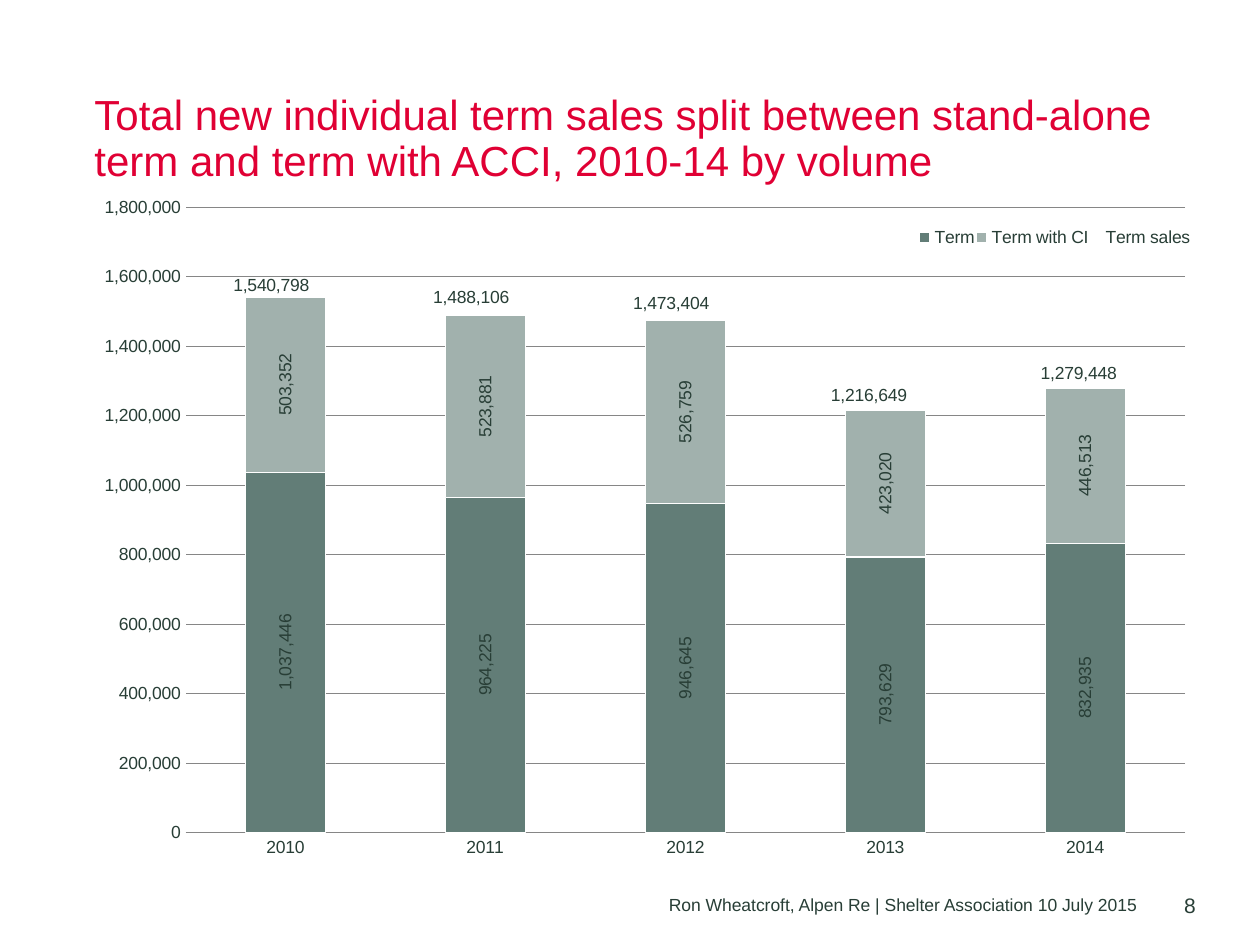
from copy import deepcopy

from lxml.etree import Element, SubElement
from pptx import Presentation
from pptx.chart.data import CategoryChartData
from pptx.dml.color import RGBColor
from pptx.enum.chart import XL_CHART_TYPE, XL_LABEL_POSITION, XL_LEGEND_POSITION, XL_TICK_MARK
from pptx.enum.text import MSO_ANCHOR, PP_ALIGN
from pptx.oxml.ns import qn
from pptx.util import Inches, Pt

TITLE = ("Total new individual term sales split between stand-alone "
         "term and term with ACCI, 2010-14 by volume")
FOOTER = "Ron Wheatcroft, Alpen Re | Shelter Association 10 July 2015"
PAGE = "8"
YEARS = ["2010", "2011", "2012", "2013", "2014"]
SALES = {
    "Term": [1037446, 964225, 946645, 793629, 832935],
    "Term with CI": [503352, 523881, 526759, 423020, 446513],
    "Term sales": [1540798, 1488106, 1473404, 1216649, 1279448],
}
TOTAL_SHIFTS = [(-0.013, 0.004), (-0.013, -0.005), (-0.013, -0.003), (-0.015, 0), (-0.006, 0)]
COLORS = {"title": "E00034", "text": "283E36", "Term": "627D77",
          "Term with CI": "A1B1AD", "edge": "FFFFFF", "grid": "868686"}
FONT = "Arial"
WIDTH, HEIGHT = 10, 7.5
MARGIN = 0.075 * WIDTH


def color(name):
    return RGBColor.from_string(COLORS[name])


def set_font(font, size, name="text"):
    font.name = FONT
    font.size = Pt(size)
    font.color.rgb = color(name)


def add_text(slide, text, box, size, name="text", align=PP_ALIGN.LEFT,
             anchor=MSO_ANCHOR.TOP, wrap=False, spacing=None):
    frame = slide.shapes.add_textbox(*map(Inches, box)).text_frame
    frame.margin_left = frame.margin_right = frame.margin_top = frame.margin_bottom = 0
    frame.word_wrap = wrap
    frame.vertical_anchor = anchor
    paragraph = frame.paragraphs[0]
    paragraph.text = text
    paragraph.alignment = align
    paragraph.line_spacing = spacing
    set_font(paragraph.font, size, name)


def manual_layout(**settings):
    layout = Element(qn("c:layout"))
    manual = SubElement(layout, qn("c:manualLayout"))
    for tag, value in settings.items():
        SubElement(manual, qn(f"c:{tag}")).set("val", str(value))
    return layout


def remove_children(parent, tag):
    for child in parent.findall(qn(tag)):
        parent.remove(child)


def move_totals_to_line(chart):
    bars = next(chart._chartSpace.iter(qn("c:barChart")))
    totals = bars.findall(qn("c:ser"))[-1]
    remove_children(totals, "c:invertIfNegative")
    lines = Element(qn("c:lineChart"))
    SubElement(lines, qn("c:grouping")).set("val", "standard")
    SubElement(lines, qn("c:varyColors")).set("val", "0")
    lines.append(totals)
    marker = Element(qn("c:marker"))
    SubElement(marker, qn("c:symbol")).set("val", "none")
    totals.find(qn("c:tx")).addnext(marker)
    SubElement(lines, qn("c:marker")).set("val", "1")
    for axis_id in bars.findall(qn("c:axId")):
        lines.append(deepcopy(axis_id))
    bars.addnext(lines)


def style_bars(chart):
    plot = chart.plots[0]
    plot.gap_width = 150
    plot.overlap = 100
    plot.vary_by_categories = False
    for series in plot.series:
        series.format.fill.solid()
        series.format.fill.fore_color.rgb = color(series.name)
        series.format.line.color.rgb = color("edge")
        series.format.line.width = Pt(0.75)
        labels = series.data_labels
        labels.show_value = True
        labels.number_format = "#,##0"
        labels.number_format_is_linked = False
        set_font(labels.font, 10)
    for labels in chart._chartSpace.iter(qn("c:dLbls")):
        body = next(labels.iter(qn("a:bodyPr")))
        body.set("rot", "-5400000")
        body.set("vert", "horz")


def style_totals(chart):
    totals = chart.plots[1].series[0]
    totals.smooth = False
    totals.format.line.fill.background()
    for index, _ in enumerate(YEARS):
        label = totals.points[index].data_label
        set_font(label.font, 10)
        label.position = XL_LABEL_POSITION.ABOVE
    for label, (x, y) in zip(chart._chartSpace.iter(qn("c:dLbl")), TOTAL_SHIFTS):
        label.find(qn("c:idx")).addnext(manual_layout(x=x, y=y))


def style_axes(chart):
    for axis in (chart.category_axis, chart.value_axis):
        axis.major_tick_mark = axis.minor_tick_mark = XL_TICK_MARK.NONE
        set_font(axis.tick_labels.font, 10)
    years, volume = chart.category_axis, chart.value_axis
    years.format.line.color.rgb = color("grid")
    volume.minimum_scale = 0
    volume.maximum_scale = 1800000
    volume.major_unit = 200000
    volume.format.line.fill.background()
    volume.has_major_gridlines = True
    volume.major_gridlines.format.line.color.rgb = color("grid")
    volume.major_gridlines.format.line.width = Pt(0.75)
    volume.tick_labels.number_format = "#,##0"
    volume.tick_labels.number_format_is_linked = False


def place_parts(chart):
    area = next(chart._chartSpace.iter(qn("c:plotArea")))
    remove_children(area, "c:layout")
    area.insert(0, manual_layout(layoutTarget="inner", xMode="edge", yMode="edge",
                                 x=0.083, y=0.017, w=0.911, h=0.885))
    chart.has_legend = True
    chart.legend.position = XL_LEGEND_POSITION.BOTTOM
    chart.legend.include_in_layout = False
    set_font(chart.legend.font, 10)
    legend = next(chart._chartSpace.iter(qn("c:legend")))
    remove_children(legend, "c:layout")
    legend.find(qn("c:legendPos")).addnext(
        manual_layout(xMode="edge", yMode="edge", x=0.75, y=0.04, w=0.25, h=0.04))


def add_sales_chart(slide):
    data = CategoryChartData(number_format="#,##0")
    data.categories = YEARS
    for name, values in SALES.items():
        data.add_series(name, values)
    chart = slide.shapes.add_chart(
        XL_CHART_TYPE.COLUMN_STACKED,
        *map(Inches, (MARGIN, 1.55, 8.71, 5.61)), data).chart
    chart.has_title = False
    set_font(chart.font, 10)
    move_totals_to_line(chart)
    style_bars(chart)
    style_totals(chart)
    style_axes(chart)
    place_parts(chart)


def main():
    deck = Presentation()
    deck.slide_width, deck.slide_height = Inches(WIDTH), Inches(HEIGHT)
    slide = deck.slides.add_slide(deck.slide_layouts[6])
    add_text(slide, FOOTER, (2.56, 7.11, 6.46, 0.15), 10,
             align=PP_ALIGN.RIGHT, anchor=MSO_ANCHOR.BOTTOM)
    add_text(slide, TITLE, (MARGIN, 0.75, 8.43, 0.95), 24, "title", wrap=True, spacing=0.9)
    add_sales_chart(slide)
    add_text(slide, PAGE, (9.25, 7.08, 0.24, 0.2), 12,
             align=PP_ALIGN.RIGHT, anchor=MSO_ANCHOR.BOTTOM)
    deck.save("out.pptx")


if __name__ == "__main__":
    main()
